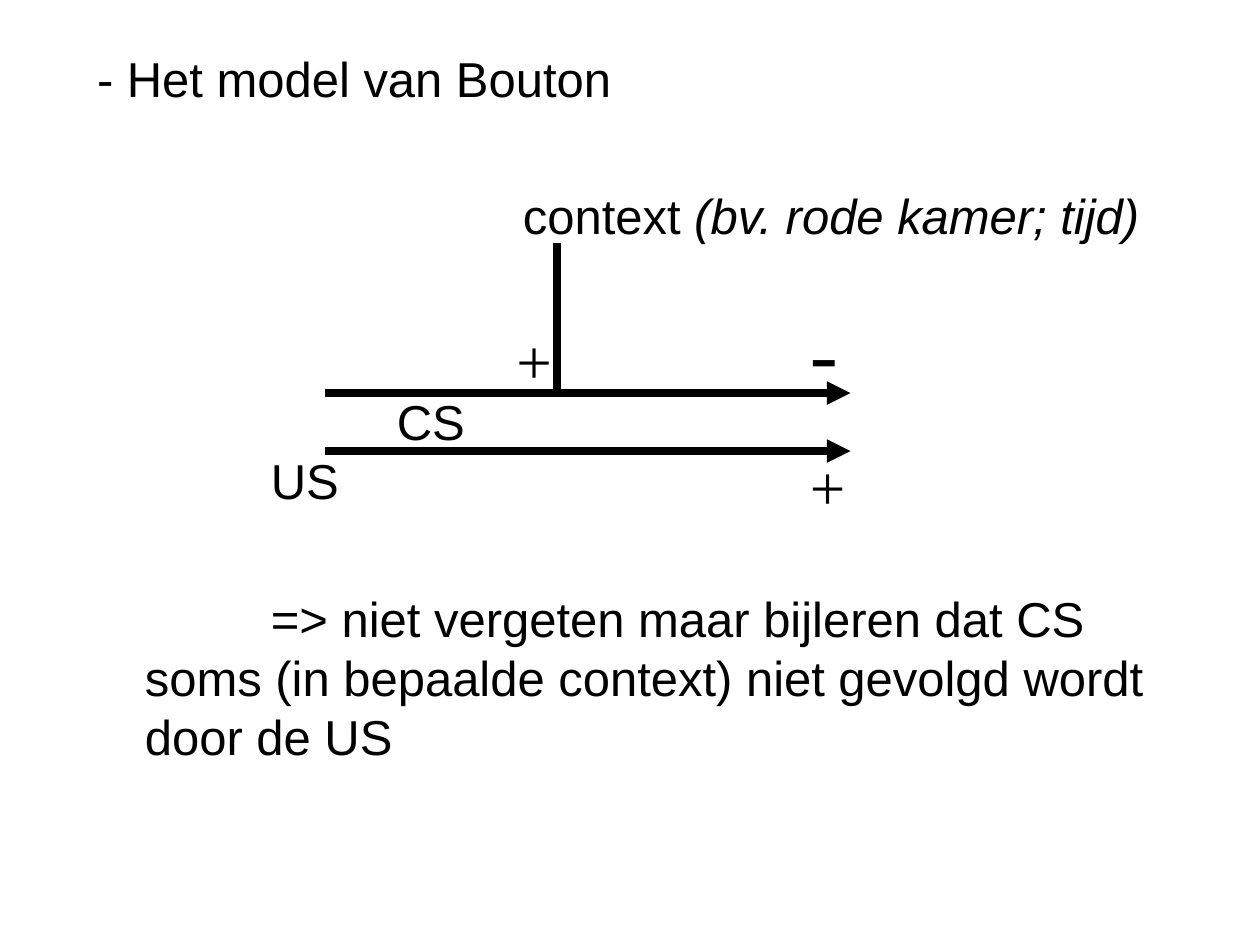
from lxml.etree import SubElement
from pptx import Presentation
from pptx.dml.color import RGBColor
from pptx.enum.shapes import MSO_CONNECTOR
from pptx.enum.text import MSO_ANCHOR, MSO_AUTO_SIZE
from pptx.oxml.ns import qn
from pptx.util import Inches, Pt

BLACK = RGBColor(0, 0, 0)
WHITE = RGBColor(255, 255, 255)
BODY_FONT = "Arial"
SIGN_FONT = "Times New Roman"

# Text grid: hanging margin, then one-inch columns
MARGIN = 0.38
COLUMN = 1
LINE = 33.7      # line pitch in points
GAP = 5.6        # extra space before a paragraph in points

# Diagram: ends of the arrows, heights of the CS and US lines
ARROW_LEFT, ARROW_RIGHT = 2.58, 6.75
CS_LEVEL, US_LEVEL = 3.12, 3.58
CONTEXT_X, CONTEXT_TOP = 4.42, 1.93


def add_text(paragraph, text, font=BODY_FONT, size=28, italic=False):
    run = paragraph.add_run()
    run.text = text
    run.font.name = font
    run.font.size = Pt(size)
    run.font.italic = italic
    run.font.color.rgb = BLACK


def format_paragraph(paragraph, left=0, first=0, lines_before=0):
    """Set indents in columns and the gap above in skipped lines."""
    properties = paragraph._p.get_or_add_pPr()
    properties.set("marL", str(Inches(MARGIN + left * COLUMN)))
    properties.set("indent", str(Inches(first)))
    SubElement(properties, qn("a:buNone"))
    paragraph.line_spacing = Pt(LINE)
    gap = lines_before * LINE + (lines_before + 1) * GAP if lines_before else 0
    paragraph.space_before = Pt(round(gap, 1))


def add_line(slide, start, end, arrow=False):
    connector = slide.shapes.add_connector(
        MSO_CONNECTOR.STRAIGHT, *map(Inches, start + end))
    connector.line.color.rgb = BLACK
    connector.line.width = Pt(4.5)
    if arrow:
        SubElement(connector.line._get_or_add_ln(), qn("a:tailEnd"), type="triangle")
    SubElement(connector._element.spPr, qn("a:effectLst"))


def add_sign(slide, text, left, top, height, size):
    box = slide.shapes.add_textbox(
        Inches(left), Inches(top), Inches(0.42), Inches(height))
    box.text_frame.word_wrap = True
    add_text(box.text_frame.paragraphs[0], text, font=SIGN_FONT, size=size)


def fill_body(body):
    body.left, body.top = Inches(0.67), Inches(0.33)
    body.width, body.height = Inches(9.06), Inches(6.33)
    frame = body.text_frame
    frame.word_wrap = True
    frame.auto_size = MSO_AUTO_SIZE.NONE
    frame.vertical_anchor = MSO_ANCHOR.TOP

    # Each row: runs of (text, italic), then the paragraph's place
    rows = [
        ([("- Het model van Bouton", False)], dict(first=-MARGIN)),
        ([("context ", False), ("(bv. rode kamer; tijd)", True)],
         dict(left=3, lines_before=1)),
        ([("CS", False)], dict(left=2, lines_before=2)),
        ([("US", False)], dict(left=1)),
        ([("=> niet vergeten maar bijleren dat CS soms (in bepaalde context) "
           "niet gevolgd wordt door de US", False)],
         dict(first=COLUMN, lines_before=1)),
    ]
    for index, (runs, place) in enumerate(rows):
        paragraph = frame.add_paragraph() if index else frame.paragraphs[0]
        format_paragraph(paragraph, **place)
        for text, italic in runs:
            add_text(paragraph, text, italic=italic)


def main():
    presentation = Presentation()
    presentation.slide_width = Inches(10)
    presentation.slide_height = Inches(7.5)
    slide = presentation.slides.add_slide(presentation.slide_layouts[1])
    slide.background.fill.solid()
    slide.background.fill.fore_color.rgb = WHITE

    # The heading is the first line of the body, so the title goes
    title = slide.shapes.title._element
    title.getparent().remove(title)
    fill_body(slide.placeholders[1])

    # US and CS arrows, and the context line down to CS
    for level in (US_LEVEL, CS_LEVEL):
        add_line(slide, (ARROW_LEFT, level), (ARROW_RIGHT, level), arrow=True)
    add_line(slide, (CONTEXT_X, CONTEXT_TOP), (CONTEXT_X, CS_LEVEL))

    # Signs of the associations
    add_sign(slide, "-", 6.33, 2.33, 0.9, size=48)
    add_sign(slide, "+", 6.33, 3.5, 0.7, size=36)
    add_sign(slide, "+", 4, 2.5, 0.7, size=36)

    presentation.save("out.pptx")


if __name__ == "__main__":
    main()
